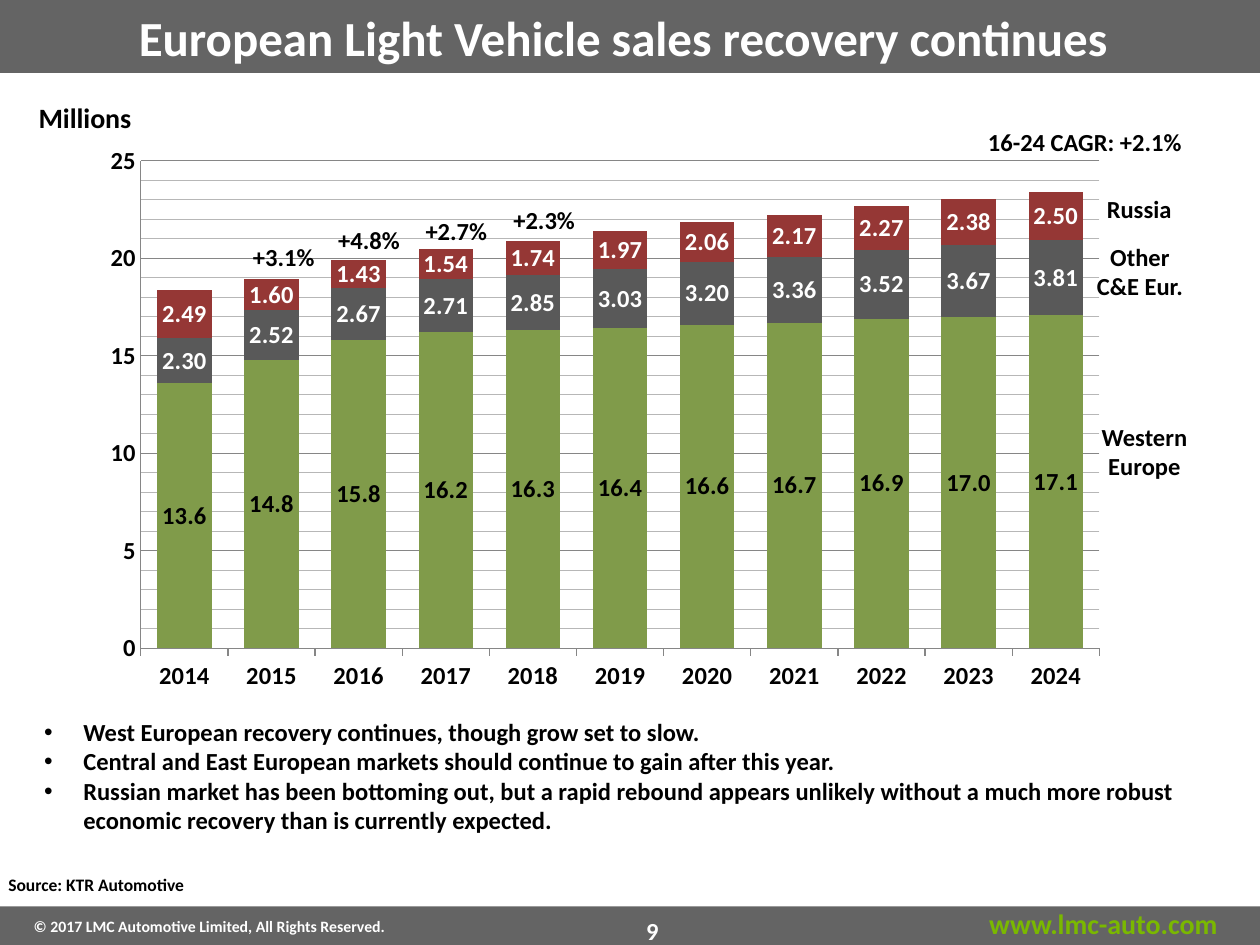
from lxml.etree import SubElement
from pptx import Presentation
from pptx.chart.data import CategoryChartData
from pptx.dml.color import RGBColor
from pptx.enum.chart import XL_CHART_TYPE, XL_LABEL_POSITION, XL_TICK_MARK
from pptx.enum.shapes import MSO_SHAPE
from pptx.enum.text import MSO_ANCHOR, PP_ALIGN
from pptx.oxml import parse_xml
from pptx.oxml.ns import nsdecls, qn
from pptx.util import Cm, Pt

COLOURS = {
    "band": "646464", "white": "FFFFFF", "black": "000000", "link": "7AB800",
    "west": "809B4A", "central": "595959", "russia": "953735", "grid": "868686",
    "minor": "B7B7B7",
}
CENTRE, LEFT = PP_ALIGN.CENTER, PP_ALIGN.LEFT

YEARS = [str(year) for year in range(2014, 2025)]
# name, fill, label colour, label format, values
SERIES = [
    ("Western Europe", "west", "black", "#,##0.0",
     (13.6, 14.8, 15.8, 16.2, 16.3, 16.4, 16.6, 16.7, 16.9, 17, 17.1)),
    ("Other C&E Eur.", "central", "white", "#,##0.00",
     (2.3, 2.52, 2.67, 2.71, 2.85, 3.03, 3.2, 3.36, 3.52, 3.67, 3.81)),
    ("Russia", "russia", "white", "#,##0.00",
     (2.49, 1.6, 1.43, 1.54, 1.74, 1.97, 2.06, 2.17, 2.27, 2.38, 2.5)),
]
GROWTH = [("+3.1%", 4.83, 4.75), ("+4.8%", 6.55, 4.42),
          ("+2.7%", 8.31, 4.24), ("+2.3%", 10.08, 4.01)]
BULLETS = [
    "West European recovery continues, though grow set to slow.",
    "Central and East European markets should continue to gain after this year.",
    "Russian market has been bottoming out, but a rapid rebound appears unlikely "
    "without a much more robust economic recovery than is currently expected.",
]


def colour(name):
    return RGBColor.from_string(COLOURS[name])


class SlideBuilder:
    font_name = "Calibri"

    def __init__(self, page):
        self.page = page

    def style(self, font, size, ink):
        font.name, font.size, font.bold = self.font_name, Pt(size), True
        font.color.rgb = colour(ink)

    def add_span(self, para, text, size, ink, align):
        para.alignment = align
        span = para.add_run()
        span.text = text
        self.style(span.font, size, ink)

    def band(self, top, height):
        bar = self.page.shapes.add_shape(
            MSO_SHAPE.RECTANGLE, 0, Cm(top), Cm(25.4), Cm(height))
        bar.shadow.inherit = False
        bar.fill.solid()
        bar.fill.fore_color.rgb = colour("band")
        bar.line.fill.background()

    def title(self, text, left, top, width, height):
        box = self.page.shapes.title
        box.left, box.top, box.width, box.height = map(Cm, (left, top, width, height))
        # Bring the title in front of the header band
        self.page.shapes.element.append(box.element)
        box.text_frame.vertical_anchor = MSO_ANCHOR.MIDDLE
        self.add_span(box.text_frame.paragraphs[0], text, 28, "white", CENTRE)

    def text(self, text, left, top, width, height, size=14, ink="black",
             align=CENTRE, wrap=True):
        box = self.page.shapes.add_textbox(*map(Cm, (left, top, width, height)))
        box.text_frame.word_wrap = wrap
        self.add_span(box.text_frame.paragraphs[0], text, size, ink, align)

    def bullets(self, lines, left, top, width, height):
        box = self.page.shapes.add_textbox(*map(Cm, (left, top, width, height)))
        frame = box.text_frame
        frame.word_wrap = True
        for index, line in enumerate(lines):
            para = frame.add_paragraph() if index else frame.paragraphs[0]
            props = para._p.get_or_add_pPr()
            props.set("marL", str(Cm(0.79)))
            props.set("indent", str(-Cm(0.79)))
            SubElement(props, qn("a:buFont"), typeface="Arial")
            SubElement(props, qn("a:buChar"), char="•")
            self.add_span(para, line, 14, "black", LEFT)

    def stacked_chart(self, left, top, width, height):
        data = CategoryChartData()
        data.categories = YEARS
        for name, _, _, _, values in SERIES:
            data.add_series(name, values)
        chart = self.page.shapes.add_chart(
            XL_CHART_TYPE.COLUMN_STACKED, *map(Cm, (left, top, width, height)), data).chart
        chart.has_legend = chart.has_title = False
        self.style(chart.font, 14, "black")
        plot = chart.plots[0]
        plot.gap_width, plot.overlap, plot.vary_by_categories = 60, 100, False

        for series, (_, fill, ink, number_format, _) in zip(plot.series, SERIES):
            series.format.fill.solid()
            series.format.fill.fore_color.rgb = colour(fill)
            labels = series.data_labels
            labels.show_value = True
            labels.number_format, labels.number_format_is_linked = number_format, False
            labels.position = XL_LABEL_POSITION.CENTER
            self.style(labels.font, 14, ink)

        scale, years = chart.value_axis, chart.category_axis
        scale.minimum_scale, scale.maximum_scale = 0, 25
        scale.major_unit, scale.minor_unit = 5, 1
        scale.has_major_gridlines = scale.has_minor_gridlines = True
        scale.major_tick_mark = XL_TICK_MARK.NONE
        years.major_tick_mark = XL_TICK_MARK.OUTSIDE
        scale.tick_labels.number_format = "0"
        scale.tick_labels.number_format_is_linked = False
        for axis in (scale, years):
            self.style(axis.tick_labels.font, 14, "black")
        # python-pptx has no object for minor gridlines, so they take their line as XML
        for part in (scale, years, scale.major_gridlines):
            part.format.line.color.rgb = colour("grid")
            part.format.line.width = Pt(0.75)
        minor = chart.element.find(".//" + qn("c:minorGridlines"))
        minor.append(parse_xml(
            f'<c:spPr {nsdecls("c", "a")}><a:ln w="{Pt(0.75)}"><a:solidFill>'
            f'<a:srgbClr val="{COLOURS["minor"]}"/></a:solidFill></a:ln></c:spPr>'))
        self.place_plot(chart, x=0.05, y=0.05, w=0.93, h=0.86)

    def place_plot(self, chart, **fractions):
        area = chart.element.find(".//" + qn("c:plotArea"))
        for old in area.findall(qn("c:layout")):
            area.remove(old)
        places = "".join(f'<c:{key} val="{value}"/>' for key, value in fractions.items())
        area.insert(0, parse_xml(
            f'<c:layout {nsdecls("c")}><c:manualLayout><c:layoutTarget val="inner"/>'
            f'<c:xMode val="edge"/><c:yMode val="edge"/>{places}'
            '</c:manualLayout></c:layout>'))


def main():
    deck = Presentation()
    deck.slide_width, deck.slide_height = Cm(25.4), Cm(19.05)
    slide = SlideBuilder(deck.slides.add_slide(deck.slide_layouts[5]))

    # Header and footer
    slide.band(0, 1.47)
    slide.band(18.27, 0.83)
    slide.text("www.lmc-auto.com", 19.35, 18.16, 5.79, 0.94, 16, "link")
    slide.text("© 2017 LMC Automotive Limited, All Rights Reserved.",
               0.43, 18.36, 9.12, 0.64, 9, "white", LEFT)
    slide.text("9", 8.59, 18.34, 9.12, 0.84, 14, "white")
    slide.title("European Light Vehicle sales recovery continues", 2.08, 0.25, 20.96, 0.97)

    # Chart with its series names and growth rates
    slide.stacked_chart(1.8, 2.67, 20.78, 11.43)
    slide.text("Russia", 22.05, 3.78, 1.83, 0.86, wrap=False)
    slide.text("Other C&E Eur.", 21.67, 4.75, 2.62, 1.45)
    slide.text("Western Europe", 21.29, 8.38, 3.56, 1.45)
    for rate, left, top in GROWTH:
        slide.text(rate, left, top, 1.78, 0.86, wrap=False)
    slide.text("16-24 CAGR: +2.1%", 19.15, 2.44, 5.44, 0.86)
    slide.text("Millions", 0.51, 1.9, 2.41, 0.94, 16, wrap=False)

    # Source and commentary
    slide.text("Source: KTR Automotive", -0.08, 17.5, 9.07, 0.69, 10, align=LEFT)
    slide.bullets(BULLETS, 0.64, 14.33, 23.29, 3.18)
    deck.save("out.pptx")


if __name__ == "__main__":
    main()
